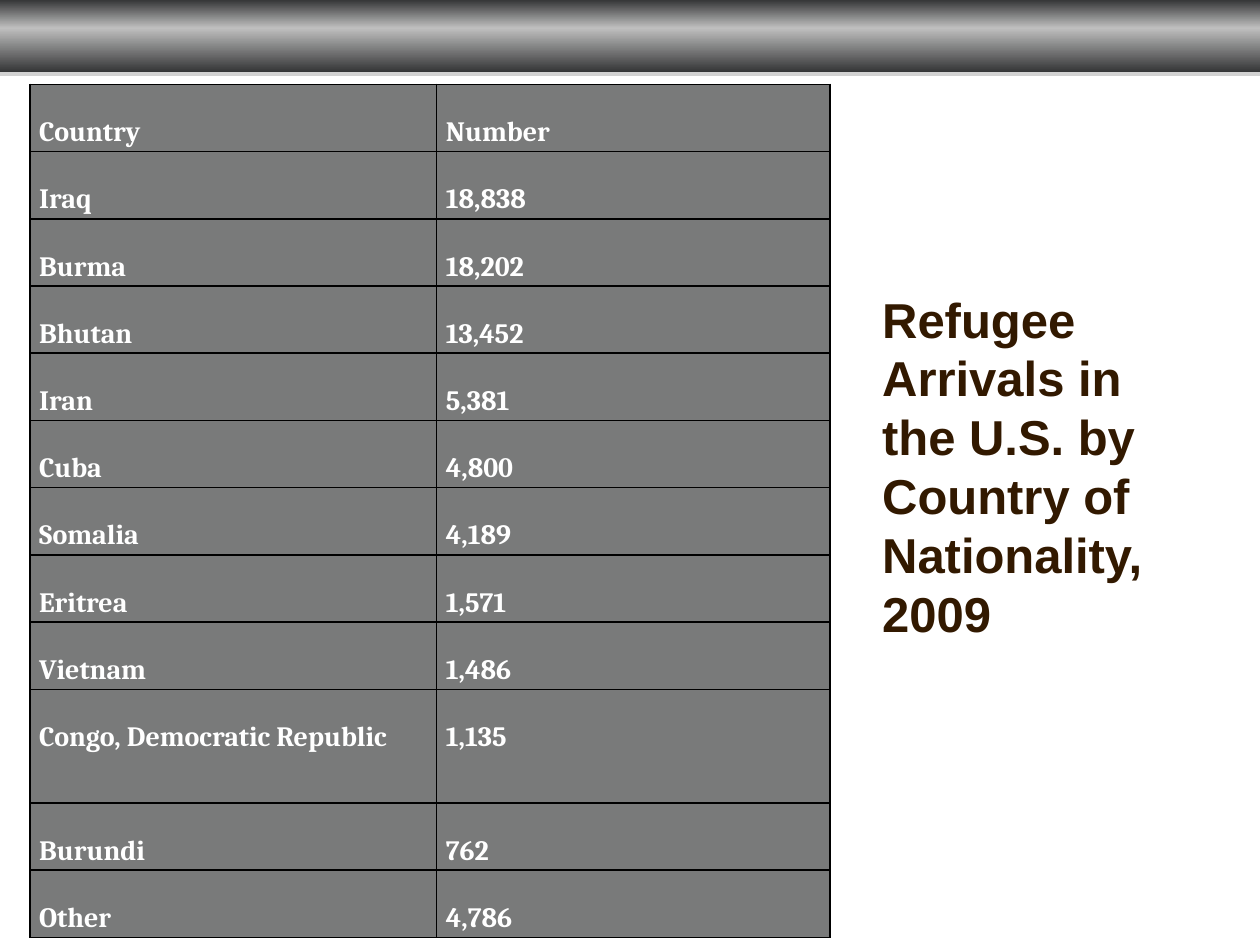
from pptx import Presentation
from pptx.dml.color import RGBColor
from pptx.enum.shapes import MSO_SHAPE
from pptx.enum.text import MSO_ANCHOR, MSO_AUTO_SIZE, PP_ALIGN
from pptx.oxml import parse_xml
from pptx.oxml.ns import nsdecls
from pptx.util import Cm, Pt

WHITE = RGBColor(0xFF, 0xFF, 0xFF)
BROWN = RGBColor(0x32, 0x19, 0x00)
CELL = RGBColor(0x15, 0x16, 0x16)
BLACK = RGBColor(0x00, 0x00, 0x00)
DARK = RGBColor(0x35, 0x36, 0x37)
LIGHT = RGBColor(0xBF, 0xBF, 0xBF)
SHADE = RGBColor(0x80, 0x80, 0x80)
NS = nsdecls("a")

rows = [
    ("Country", "Number"),
    ("Iraq", "18,838"),
    ("Burma", "18,202"),
    ("Bhutan", "13,452"),
    ("Iran", "5,381"),
    ("Cuba", "4,800"),
    ("Somalia", "4,189"),
    ("Eritrea", "1,571"),
    ("Vietnam", "1,486"),
    ("Congo, Democratic Republic", "1,135"),
    ("Burundi", "762"),
    ("Other", "4,786"),
]

prs = Presentation()
prs.slide_width, prs.slide_height = Cm(25.4), Cm(19.05)
slide = prs.slides.add_slide(prs.slide_layouts[5])

bar = slide.shapes.add_shape(MSO_SHAPE.RECTANGLE, 0, 0, prs.slide_width, Cm(1.45))
bar.line.fill.background()
stops = "".join(
    f'<a:gs pos="{pos * 1000}"><a:srgbClr val="{color}"/></a:gs>'
    for pos, color in [(0, DARK), (39, LIGHT), (100, DARK)]
)
props = bar.element.spPr
props.insert(2, parse_xml(
    f'<a:gradFill {NS}><a:gsLst>{stops}</a:gsLst><a:lin ang="5400000" scaled="0"/></a:gradFill>'
))
props.append(parse_xml(
    f'<a:effectLst {NS}><a:outerShdw blurRad="0" dist="{Pt(1.8)}" dir="5400000">'
    f'<a:srgbClr val="{SHADE}"><a:alpha val="35000"/></a:srgbClr></a:outerShdw></a:effectLst>'
))

frame = slide.shapes.add_table(len(rows), 2, Cm(0.6), Cm(1.7), Cm(16.13), Cm(17.2))
table = frame.table
table.columns[0].width, table.columns[1].width = Cm(8.2), Cm(7.93)
for r, row in enumerate(rows):
    table.rows[r].height = Cm(2.29 if row[0].startswith("Congo") else 1.25)
    for c, text in enumerate(row):
        cell = table.cell(r, c)
        cell.text = text
        cell.margin_left = cell.margin_right = Cm(0.19)
        cell.margin_top = cell.margin_bottom = 0
        para = cell.text_frame.paragraphs[0]
        para.line_spacing = 2.0
        para.space_after = Pt(10)
        font = para.font
        font.name, font.size, font.bold = "Cambria", Pt(16), True
        font.color.rgb = WHITE
        cell.fill.solid()
        cell.fill.fore_color.rgb = CELL
        props = cell._tc.tcPr
        props.find(".//{*}srgbClr").append(parse_xml(f'<a:alpha {NS} val="57000"/>'))
        for i, side in enumerate("LRTB"):
            props.insert(i, parse_xml(
                f'<a:ln{side} {NS} w="{Pt(1)}"><a:solidFill><a:srgbClr val="{BLACK}"/>'
                f'</a:solidFill></a:ln{side}>'
            ))

title = slide.shapes.title
title.left, title.top, title.width, title.height = Cm(17.53), Cm(5.7), Cm(6.4), Cm(7.44)
title.text = "Refugee Arrivals in the U.S. by Country of Nationality, 2009"
body = title.text_frame
body.word_wrap = True
body.auto_size = MSO_AUTO_SIZE.SHAPE_TO_FIT_TEXT
body.vertical_anchor = MSO_ANCHOR.TOP
para = body.paragraphs[0]
para.alignment = PP_ALIGN.LEFT
font = para.font
font.name, font.size, font.bold = "Arial", Pt(28), True
font.color.rgb = BROWN

prs.save("out.pptx")
